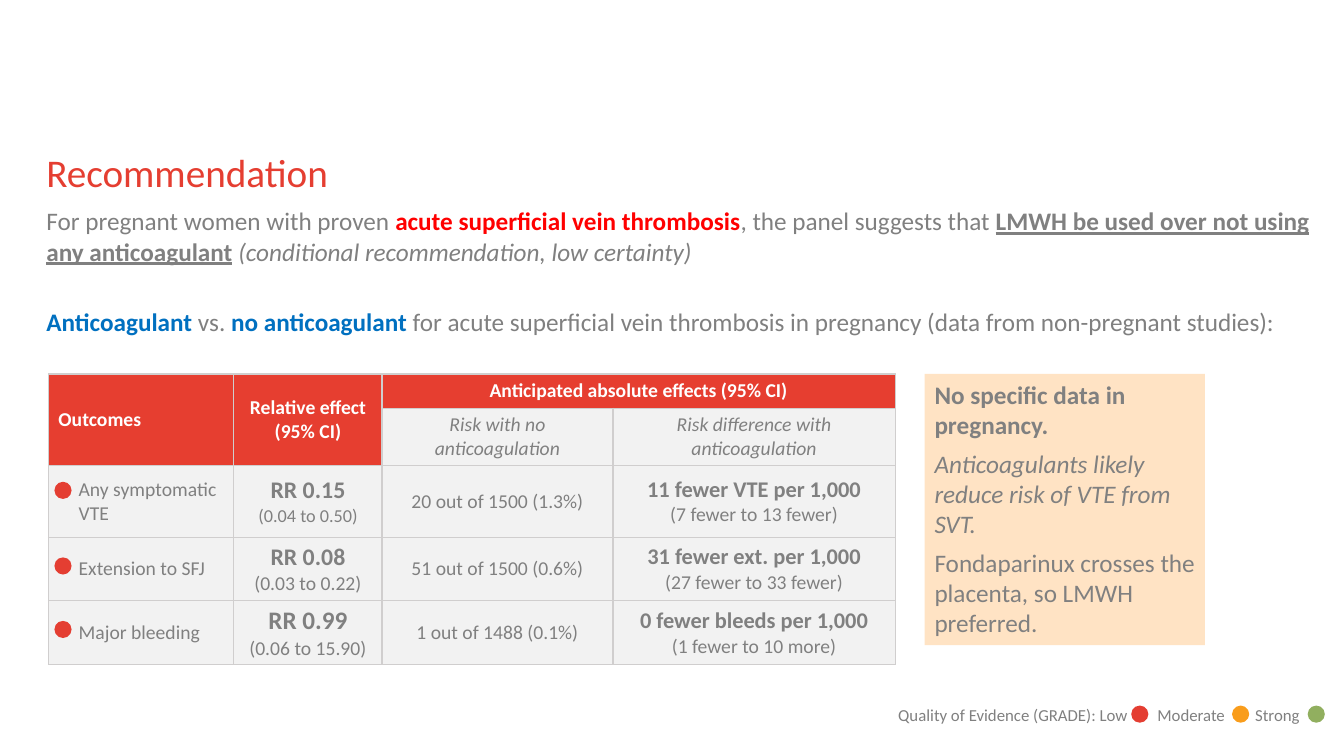
from lxml.etree import SubElement
from pptx import Presentation
from pptx.dml.color import RGBColor
from pptx.enum.shapes import MSO_SHAPE
from pptx.enum.text import MSO_ANCHOR, PP_ALIGN
from pptx.oxml.ns import qn
from pptx.util import Inches, Pt

FONT = "Calibri"
COLORS = {
    "title": "E53E31", "header": "E63E30", "cell": "F2F2F2", "border": "D0CECE",
    "text": "808080", "white": "FFFFFF", "condition": "FF0000", "treatment": "0070C0",
    "note": "FFE3C4", "low": "E43E32", "moderate": "F99D1C", "strong": "91AF5F",
}
COLUMN_WIDTHS = [1.84, 1.47, 2.29, 2.8]
ROW_HEIGHTS = [0.34, 0.57, 0.71, 0.63, 0.63]
DOT_SIZE = 0.17
OUTCOMES = [
    ("Any symptomatic VTE", "RR 0.15", 17, "(0.04 to 0.50)", 13, "20 out of 1500 (1.3%)",
     "11 fewer VTE per 1,000", "(7 fewer to 13 fewer)", 0.16),
    ("Extension to SFJ", "RR 0.08", 17, "(0.03 to 0.22)", 14, "51 out of 1500 (0.6%)",
     "31 fewer ext. per 1,000", "(27 fewer to 33 fewer)", 0.2),
    ("Major bleeding", "RR 0.99", 18, "(0.06 to 15.90)", 14, "1 out of 1488 (0.1%)",
     "0 fewer bleeds per 1,000", "(1 fewer to 10 more)", 0.2),
]


def color(name):
    return RGBColor.from_string(COLORS[name])


def add_run(paragraph, text, size, color_name="text", bold=False, italic=False, underline=False):
    run = paragraph.add_run()
    run.text = text
    font = run.font
    font.name, font.size = FONT, Pt(size)
    font.bold, font.italic, font.underline = bold, italic, underline
    font.color.rgb = color(color_name)


def add_text_box(slide, left, top, width, height, margin=0.0):
    text_box = slide.shapes.add_textbox(Inches(left), Inches(top), Inches(width), Inches(height))
    frame = text_box.text_frame
    frame.word_wrap = True
    if not margin:
        frame.margin_left = frame.margin_right = frame.margin_top = frame.margin_bottom = 0
    return frame


def add_filled_shape(slide, kind, left, top, width, height, fill):
    shape = slide.shapes.add_shape(kind, Inches(left), Inches(top), Inches(width), Inches(height))
    shape.shadow.inherit = False
    shape.fill.solid()
    shape.fill.fore_color.rgb = color(fill)
    shape.line.fill.background()
    return shape


def add_dot(slide, left, top, fill):
    add_filled_shape(slide, MSO_SHAPE.OVAL, left, top, DOT_SIZE, DOT_SIZE, fill)


def add_title(slide, left, top, width, height):
    frame = add_text_box(slide, left, top, width, height)
    add_run(frame.paragraphs[0], "Recommendation", 28, "title")


def add_recommendation(slide, left, top, width, height):
    frame = add_text_box(slide, left, top, width, height)
    advice = frame.paragraphs[0]
    add_run(advice, "For pregnant women with proven ", 18)
    add_run(advice, "acute superficial vein thrombosis", 18, "condition", bold=True)
    add_run(advice, ", the panel suggests that ", 18)
    add_run(advice, "LMWH be used over not using any anticoagulant", 18, bold=True, underline=True)
    add_run(advice, " ", 18)
    add_run(advice, "(conditional recommendation, low certainty)", 18, italic=True)
    comparison = frame.add_paragraph()
    comparison.space_before = Pt(29)
    add_run(comparison, "Anticoagulant ", 18, "treatment", bold=True)
    add_run(comparison, "vs. ", 18)
    add_run(comparison, "no anticoagulant ", 18, "treatment", bold=True)
    add_run(comparison, "for acute superficial vein thrombosis in pregnancy "
            "(data from non-pregnant studies):", 18)


def style_cell(cell, fill):
    properties = cell._tc.get_or_add_tcPr()
    for side in ("a:lnL", "a:lnR", "a:lnT", "a:lnB"):
        line = SubElement(properties, qn(side), w=str(Pt(1)))
        SubElement(SubElement(line, qn("a:solidFill")), qn("a:srgbClr"), val=COLORS["border"])
    cell.fill.solid()
    cell.fill.fore_color.rgb = color(fill)
    cell.vertical_anchor = MSO_ANCHOR.MIDDLE


def fill_cell(cell, lines, centered=True):
    for index, (text, size, style) in enumerate(lines):
        frame = cell.text_frame
        paragraph = frame.add_paragraph() if index else frame.paragraphs[0]
        paragraph.alignment = PP_ALIGN.CENTER if centered else PP_ALIGN.LEFT
        add_run(paragraph, text, size, **style)


def add_outcome_table(slide, left, top):
    table = slide.shapes.add_table(
        len(ROW_HEIGHTS), len(COLUMN_WIDTHS), Inches(left), Inches(top),
        Inches(sum(COLUMN_WIDTHS)), Inches(sum(ROW_HEIGHTS))).table
    for column, width in zip(table.columns, COLUMN_WIDTHS):
        column.width = Inches(width)
    for row, height in zip(table.rows, ROW_HEIGHTS):
        row.height = Inches(height)
    for row in range(len(ROW_HEIGHTS)):
        for column in range(len(COLUMN_WIDTHS)):
            is_header = row == 0 or (row == 1 and column < 2)
            style_cell(table.cell(row, column), "header" if is_header else "cell")
    table.cell(0, 0).merge(table.cell(1, 0))
    table.cell(0, 1).merge(table.cell(1, 1))
    table.cell(0, 2).merge(table.cell(0, 3))

    header, strong, italic = {"color_name": "white", "bold": True}, {"bold": True}, {"italic": True}
    fill_cell(table.cell(0, 0), [("Outcomes", 14, header)], centered=False)
    fill_cell(table.cell(0, 1), [("Relative effect (95% CI)", 14, header)])
    fill_cell(table.cell(0, 2), [("Anticipated absolute effects (95% CI)", 14, header)])
    fill_cell(table.cell(1, 2), [("Risk with no anticoagulation", 14, italic)])
    fill_cell(table.cell(1, 3), [("Risk difference with anticoagulation", 14, italic)])

    for row, outcome in enumerate(OUTCOMES, start=2):
        name, ratio, ratio_size, interval, interval_size, risk, effect, spread, offset = outcome
        table.cell(row, 0).margin_left = Inches(0.3)
        fill_cell(table.cell(row, 0), [(name, 14, {})], centered=False)
        fill_cell(table.cell(row, 1), [(ratio, ratio_size, strong), (interval, interval_size, {})])
        fill_cell(table.cell(row, 2), [(risk, 14, {})])
        fill_cell(table.cell(row, 3), [(effect, 16, strong), (spread, 14, {})])
        add_dot(slide, left + 0.06, top + sum(ROW_HEIGHTS[:row]) + offset, "low")


def add_note(slide, left, top, width, height):
    note = add_filled_shape(slide, MSO_SHAPE.RECTANGLE, left, top, width, height, "note")
    frame = note.text_frame
    frame.word_wrap = True
    frame.vertical_anchor = MSO_ANCHOR.TOP
    lines = [
        ("No specific data in pregnancy.", {"bold": True}),
        ("Anticoagulants likely reduce risk of VTE from SVT.", {"italic": True}),
        ("Fondaparinux crosses the placenta, so LMWH preferred.", {}),
    ]
    for index, (text, style) in enumerate(lines):
        paragraph = frame.add_paragraph() if index else frame.paragraphs[0]
        paragraph.alignment = PP_ALIGN.LEFT
        paragraph.space_after = Pt(6)
        add_run(paragraph, text, 18, **style)


def add_evidence_legend(slide, left, top, width, height):
    frame = add_text_box(slide, left, top, width, height, margin=0.1)
    paragraph = frame.paragraphs[0]
    tabs = SubElement(paragraph._p.get_or_add_pPr(), qn("a:tabLst"))
    for position in (2.57, 3.54):
        SubElement(tabs, qn("a:tab"), pos=str(Inches(position)), algn="l")
    add_run(paragraph, "Quality of Evidence (GRADE): Low\tModerate\tStrong", 12)
    for offset, level in ((2.41, "low"), (3.41, "moderate"), (4.16, "strong")):
        add_dot(slide, left + offset, top + 0.06, level)


def main():
    presentation = Presentation()
    presentation.slide_width, presentation.slide_height = Inches(13.33), Inches(7.5)
    slide = presentation.slides.add_slide(presentation.slide_layouts[6])
    add_recommendation(slide, 0.46, 2.04, 12.69, 1.5)
    add_outcome_table(slide, 0.48, 3.71)
    add_note(slide, 9.17, 3.71, 2.78, 2.69)
    add_title(slide, 0.46, 1.47, 12, 0.5)
    add_evidence_legend(slide, 8.81, 6.94, 4.52, 0.3)
    presentation.save("out.pptx")


if __name__ == "__main__":
    main()
